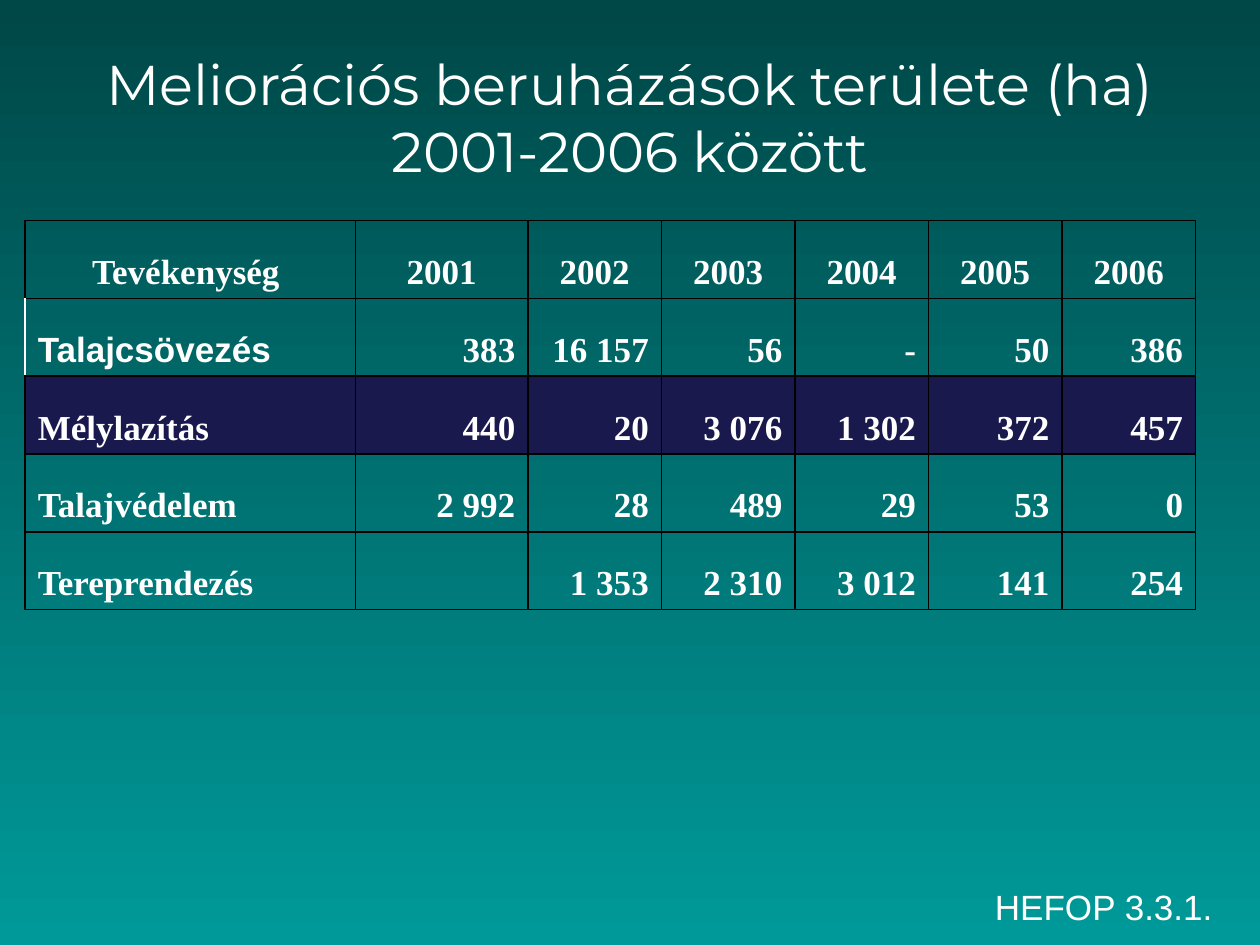
from lxml import etree
from pptx import Presentation
from pptx.dml.color import RGBColor
from pptx.enum import text
from pptx.oxml.ns import qn
from pptx.util import Inches, Pt

WHITE = RGBColor(0xFF, 0xFF, 0xFF)
DARK_TEAL = RGBColor(0x00, 0x47, 0x47)
TEAL = RGBColor(0x00, 0x99, 0x99)
NAVY = RGBColor(0x19, 0x19, 0x4D)
BLACK = RGBColor(0x00, 0x00, 0x00)

AREAS = [
    ["Tevékenység\u00a0", "2001", "2002", "2003", "2004", "2005", "2006"],
    ["Talajcsövezés", "383", "16 157", "56", "-", "50", "386"],
    ["Mélylazítás", "440", "20", "3 076", "1 302", "372", "457"],
    ["Talajvédelem", "2 992", "28", "489", "29", "53", "0"],
    ["Tereprendezés", "", "1 353", "2 310", "3 012", "141", "254"],
]
COLUMN_WIDTHS = [2.62, 1.37] + [1.06] * 5
HIGHLIGHTED_ROW = 2
PIPE_ROW = 1


def set_font(paragraph, name, size, bold=False):
    font = paragraph.font
    font.name, font.size, font.bold = name, Pt(size), bold
    font.color.rgb = WHITE


def paint_background(slide):
    fill = slide.background.fill
    fill.gradient()
    fill.gradient_angle = 270
    for stop, color, position in zip(fill.gradient_stops, (DARK_TEAL, TEAL), (0, 1)):
        stop.color.rgb = color
        stop.position = position


def place_title(slide, left, top, width, height):
    title = slide.shapes.title
    title.left, title.top, title.width, title.height = left, top, width, height
    frame = title.text_frame
    frame.text = "Meliorációs beruházások területe (ha) 2001-2006 között"
    frame.vertical_anchor = text.MSO_ANCHOR.MIDDLE
    frame.paragraphs[0].alignment = text.PP_ALIGN.CENTER
    set_font(frame.paragraphs[0], "Montserrat", 32)


def add_borders(cell, sides):
    properties = cell._tc.get_or_add_tcPr()
    for side in sides:
        line = etree.SubElement(properties, qn(f"a:ln{side}"), w=str(Pt(1)))
        solid = etree.SubElement(line, qn("a:solidFill"))
        etree.SubElement(solid, qn("a:srgbClr"), val=str(BLACK))


def format_cell(cell, row, column):
    cell.vertical_anchor = text.MSO_ANCHOR.BOTTOM
    # The first data row is open on its left side.
    add_borders(cell, "RTB" if (row, column) == (PIPE_ROW, 0) else "LRTB")
    if row == HIGHLIGHTED_ROW:
        cell.fill.solid()
        cell.fill.fore_color.rgb = NAVY
    else:
        cell.fill.background()

    paragraph = cell.text_frame.paragraphs[0]
    if row == 0:
        paragraph.alignment = text.PP_ALIGN.CENTER
    else:
        paragraph.alignment = text.PP_ALIGN.RIGHT if column else text.PP_ALIGN.LEFT
    indents = paragraph._p.get_or_add_pPr()
    indents.set("marL", str(Inches(0.38)))
    indents.set("indent", str(Inches(-0.38)))
    is_pipe_label = (row, column) == (PIPE_ROW, 0)
    set_font(paragraph, "Arial" if is_pipe_label else "Times New Roman", 20, bold=True)


def add_area_table(slide, left, top, width, height):
    table = slide.shapes.add_table(
        len(AREAS), len(COLUMN_WIDTHS), left, top, width, height).table
    table.first_row = table.horz_banding = False
    for column, column_width in zip(table.columns, COLUMN_WIDTHS):
        column.width = Inches(column_width)
    for r, values in enumerate(AREAS):
        for c, value in enumerate(values):
            cell = table.cell(r, c)
            cell.text = value
            format_cell(cell, r, c)


def add_programme_label(slide, left, top, width, height):
    frame = slide.shapes.add_textbox(left, top, width, height).text_frame
    frame.word_wrap = True
    frame.text = "HEFOP 3.3.1."
    frame.paragraphs[0].alignment = text.PP_ALIGN.CENTER
    set_font(frame.paragraphs[0], "Arial", 20)


def main():
    presentation = Presentation()
    presentation.slide_width, presentation.slide_height = Inches(10), Inches(7.5)
    slide = presentation.slides.add_slide(presentation.slide_layouts[5])
    paint_background(slide)
    add_programme_label(slide, Inches(7.52), Inches(6.98), Inches(2.48), Inches(0.52))
    place_title(slide, Inches(0.5), Inches(0.3), Inches(9), Inches(1.25))
    add_area_table(slide, Inches(0.2), Inches(1.75), Inches(9.3), Inches(3.09))
    presentation.save("out.pptx")


if __name__ == "__main__":
    main()
